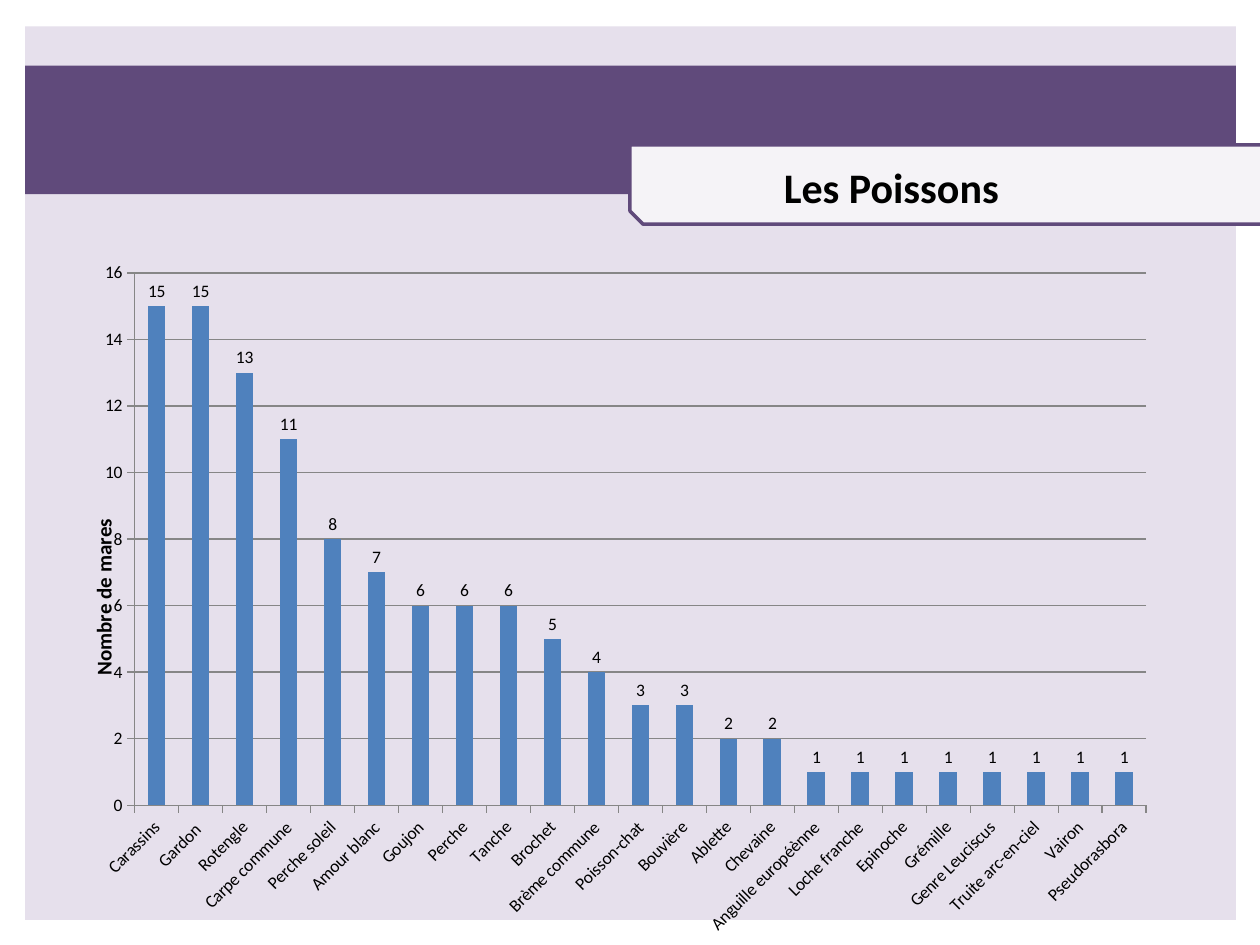
from lxml import etree
from pptx import Presentation
from pptx import util as u
from pptx.chart import data as chart_data
from pptx.dml.color import RGBColor
from pptx.enum import chart as charts, shapes, text
from pptx.oxml import ns

COLORS = {"background": "E6E0EC", "band": "604A7B", "label": "F5F3F7",
          "bar": "4F81BD", "axis": "868686", "text": "000000"}
FONT = "Calibri"
MARES_BY_FISH = {
    "Carassins": 15, "Gardon ": 15, "Rotengle": 13, "Carpe commune": 11,
    "Perche soleil": 8, "Amour blanc": 7, "Goujon": 6, "Perche": 6,
    "Tanche": 6, "Brochet": 5, "Brème commune": 4, "Poisson-chat": 3,
    "Bouvière": 3, "Ablette": 2, "Chevaine": 2, "Anguille européènne": 1,
    "Loche franche": 1, "Epinoche": 1, "Grémille": 1, "Genre Leuciscus": 1,
    "Truite arc-en-ciel": 1, "Vairon": 1, "Pseudorasbora": 1,
}


def color(name):
    return RGBColor.from_string(COLORS[name])


def inches(*lengths):
    return [u.Inches(length) for length in lengths]


def style_font(font, size, bold=False):
    font.name, font.size, font.bold = FONT, u.Pt(size), bold
    font.color.rgb = color("text")


def add_panel(slide, kind, box, fill, line=None):
    shape = slide.shapes.add_shape(kind, *inches(*box))
    shape.shadow.inherit = False
    shape.fill.solid()
    shape.fill.fore_color.rgb = color(fill)
    if line:
        shape.line.color.rgb = color(line)
        shape.line.width = u.Pt(2)
    else:
        shape.line.fill.background()


def add_backdrop(slide, left, top, width, height):
    rectangle = shapes.MSO_SHAPE.RECTANGLE
    add_panel(slide, rectangle, (left, top, width, height), "background")
    add_panel(slide, rectangle, (left, top + 0.31, width, 1.02), "band")
    add_panel(slide, shapes.MSO_SHAPE.SNIP_2_DIAG_RECTANGLE,
              (left + 4.8, top + 0.94, 5.2, 0.63), "label", "band")


def place_title(slide, left, top, width, height):
    title = slide.shapes.title
    title.left, title.top, title.width, title.height = inches(left, top, width, height)
    slide.shapes._spTree.append(title._element)  # in front of the panels
    title.text_frame.vertical_anchor = text.MSO_ANCHOR.MIDDLE
    paragraph = title.text_frame.paragraphs[0]
    paragraph.alignment = text.PP_ALIGN.CENTER
    run = paragraph.add_run()
    run.text = "Les Poissons"
    style_font(run.font, 24, bold=True)


def set_layout(parent, index, **settings):
    """Give a chart part a manual layout, as fractions of the chart."""
    for old_layout in parent.findall(ns.qn("c:layout")):
        parent.remove(old_layout)
    layout = etree.Element(ns.qn("c:layout"))
    manual = etree.SubElement(layout, ns.qn("c:manualLayout"))
    for tag, value in settings.items():
        etree.SubElement(manual, ns.qn(f"c:{tag}")).set("val", str(value))
    parent.insert(index, layout)


def style_axes(chart):
    for axis in (chart.category_axis, chart.value_axis):
        axis.major_tick_mark = charts.XL_TICK_MARK.OUTSIDE
        axis.minor_tick_mark = charts.XL_TICK_MARK.NONE
        axis.format.line.color.rgb = color("axis")
        style_font(axis.tick_labels.font, 10)
    labels = chart.category_axis._element.find(ns.qn("c:txPr"))
    labels.find(ns.qn("a:bodyPr")).set("rot", str(-45 * 60000))

    value_axis = chart.value_axis
    value_axis.minimum_scale, value_axis.maximum_scale = 0, 16
    value_axis.major_unit = 2
    value_axis.has_major_gridlines = True
    value_axis.major_gridlines.format.line.color.rgb = color("axis")
    title = value_axis.axis_title
    run = title.text_frame.paragraphs[0].add_run()
    run.text = "Nombre de mares"
    style_font(run.font, 12, bold=True)
    body = title.text_frame._txBody.find(ns.qn("a:bodyPr"))
    body.set("rot", str(-90 * 60000))
    body.set("vert", "horz")
    set_layout(title._element, 1, xMode="edge", yMode="edge", x=0.01, y=0.39)


def add_fish_chart(slide, left, top, width, height):
    data = chart_data.CategoryChartData(number_format="General")
    data.categories = MARES_BY_FISH.keys()
    data.add_series("Series 1", MARES_BY_FISH.values())
    chart = slide.shapes.add_chart(
        charts.XL_CHART_TYPE.COLUMN_CLUSTERED,
        *inches(left, top, width, height), data).chart
    chart.has_title = chart.has_legend = False
    style_font(chart.font, 10)

    plot = chart.plots[0]
    plot.vary_by_categories = False
    plot.gap_width = 150
    plot.has_data_labels = True
    plot.data_labels.show_value = True
    plot.data_labels.position = charts.XL_LABEL_POSITION.OUTSIDE_END
    style_font(plot.data_labels.font, 10)
    bars = plot.series[0].format.fill
    bars.solid()
    bars.fore_color.rgb = color("bar")

    style_axes(chart)
    plot_area = chart._chartSpace.find(f".//{ns.qn('c:plotArea')}")
    set_layout(plot_area, 0, layoutTarget="inner", xMode="edge", yMode="edge",
               x=0.054, y=0.041, w=0.905, h=0.767)


def main():
    presentation = Presentation()
    presentation.slide_width, presentation.slide_height = inches(10, 7.5)
    slide = presentation.slides.add_slide(presentation.slide_layouts[5])
    add_backdrop(slide, 0.2, 0.21, 9.61, 7.09)
    add_fish_chart(slide, 0.59, 1.94, 8.87, 5.51)
    place_title(slide, 4.77, 1.23, 4.61, 0.5)
    presentation.save("out.pptx")


if __name__ == "__main__":
    main()
